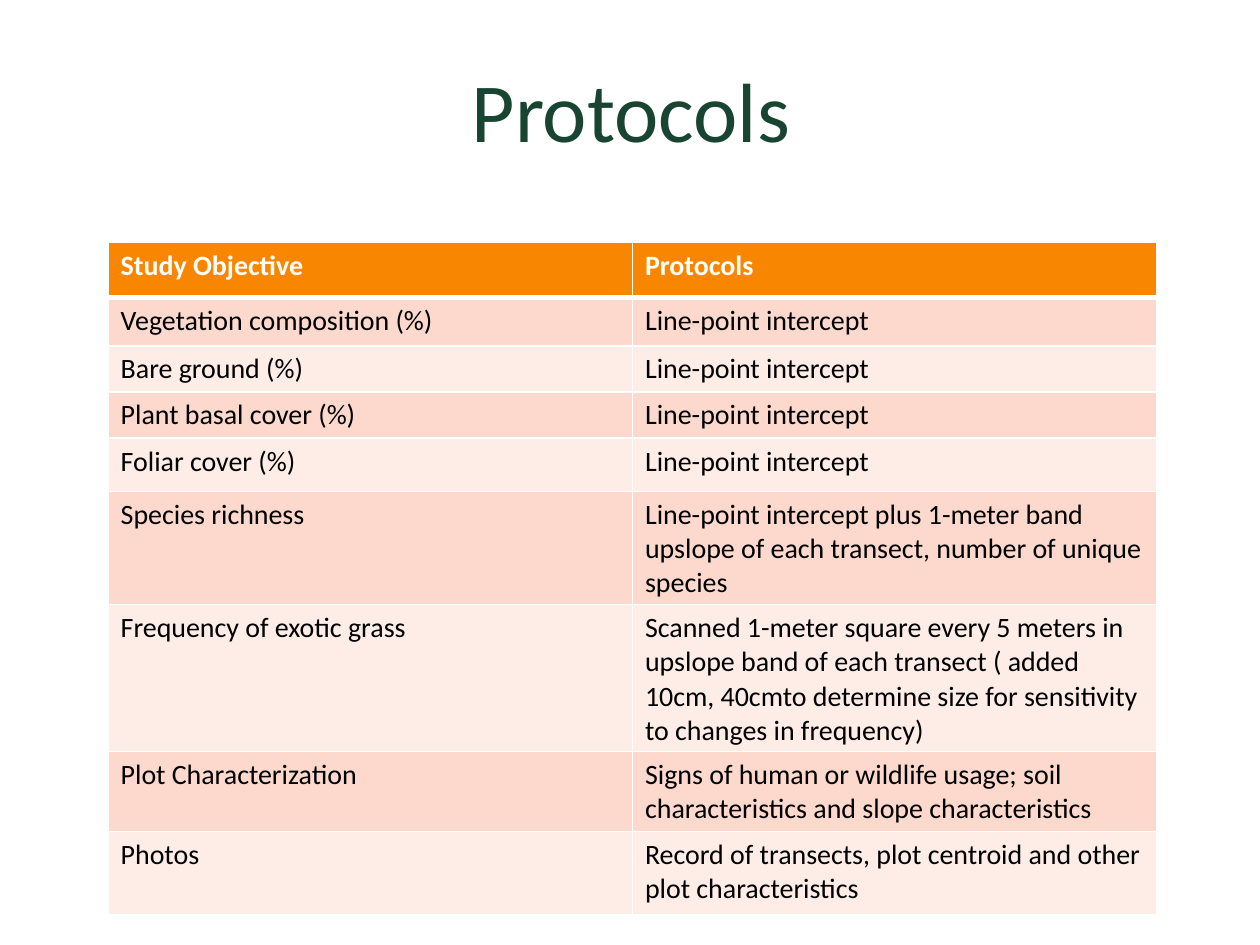
"""Build a slide with a table of study objectives and their field protocols."""
from lxml import etree
from pptx import Presentation
from pptx.dml.color import RGBColor
from pptx.enum.text import MSO_ANCHOR, PP_ALIGN
from pptx.oxml.ns import qn
from pptx.util import Cm, Pt

CENTER = PP_ALIGN.CENTER
MIDDLE = MSO_ANCHOR.MIDDLE

TITLE = "Protocols"
HEADER = ("Study Objective", "Protocols")
OBJECTIVES = [
    ("Vegetation composition (%)", "Line-point intercept"),
    ("Bare ground (%)", "Line-point intercept"),
    ("Plant basal cover (%)", "Line-point intercept"),
    ("Foliar cover (%)", "Line-point intercept"),
    ("Species richness",
     "Line-point intercept plus 1-meter band upslope of each transect, "
     "number of unique species"),
    ("Frequency of exotic grass",
     "Scanned 1-meter square every 5 meters in upslope band of each transect "
     "( added 10cm, 40cmto determine size for sensitivity to changes in frequency)"),
    ("Plot Characterization",
     "Signs of human or wildlife usage; soil characteristics and slope characteristics"),
    ("Photos", "Record of transects, plot centroid and other plot characteristics"),
]
ROW_HEIGHTS = (1.12, 0.97, 0.91, 0.81, 1.07, 1.68, 1.68, 1.02, 1.68)
COLUMN_WIDTH = 10.57

FONT = "Calibri"
GREEN, ORANGE, WHITE, BLACK = "194431", "F88600", "FFFFFF", "000000"
BANDS = ("FCD9CC", "FEEDE7")
THIN, THICK = 1, 3


def color(hex_code):
    return RGBColor.from_string(hex_code)


def style_text(text_frame, size, hex_code, bold=False):
    for paragraph in text_frame.paragraphs:
        for run in paragraph.runs:
            run.font.name = FONT
            run.font.size = Pt(size)
            run.font.bold = bold
            run.font.color.rgb = color(hex_code)


def add_borders(cell, top, bottom):
    properties = cell._tc.get_or_add_tcPr()
    widths = {"a:lnL": THIN, "a:lnR": THIN, "a:lnT": top, "a:lnB": bottom}
    for side, width in widths.items():
        border = etree.SubElement(properties, qn(side), w=str(Pt(width)))
        fill = etree.SubElement(border, qn("a:solidFill"))
        etree.SubElement(fill, qn("a:srgbClr"), val=WHITE)


def add_title(slide):
    title = slide.shapes.add_textbox(Cm(1.14), Cm(0.23), Cm(23.16), Cm(3.94))
    frame = title.text_frame
    frame.word_wrap = True
    frame.vertical_anchor = MIDDLE
    frame.text = TITLE
    frame.paragraphs[0].alignment = CENTER
    style_text(frame, 48, GREEN)


def add_protocol_table(slide):
    rows = [HEADER, *OBJECTIVES]
    table = slide.shapes.add_table(
        len(rows), len(HEADER), Cm(2.18), Cm(4.88),
        Cm(COLUMN_WIDTH * len(HEADER)), Cm(sum(ROW_HEIGHTS))).table
    for column in table.columns:
        column.width = Cm(COLUMN_WIDTH)
    for index, (texts, height) in enumerate(zip(rows, ROW_HEIGHTS)):
        table.rows[index].height = Cm(height)
        is_header = index == 0
        background = ORANGE if is_header else BANDS[(index - 1) % 2]
        for cell, text in zip(table.rows[index].cells, texts):
            cell.text_frame.text = text
            style_text(cell.text_frame, 16, WHITE if is_header else BLACK, is_header)
            add_borders(cell, THICK if index == 1 else THIN,
                        THICK if is_header else THIN)
            cell.fill.solid()
            cell.fill.fore_color.rgb = color(background)


def main():
    presentation = Presentation()
    presentation.slide_width = Cm(25.4)
    presentation.slide_height = Cm(19.05)
    slide = presentation.slides.add_slide(presentation.slide_layouts[6])
    add_title(slide)
    add_protocol_table(slide)
    presentation.save("out.pptx")


if __name__ == "__main__":
    main()
